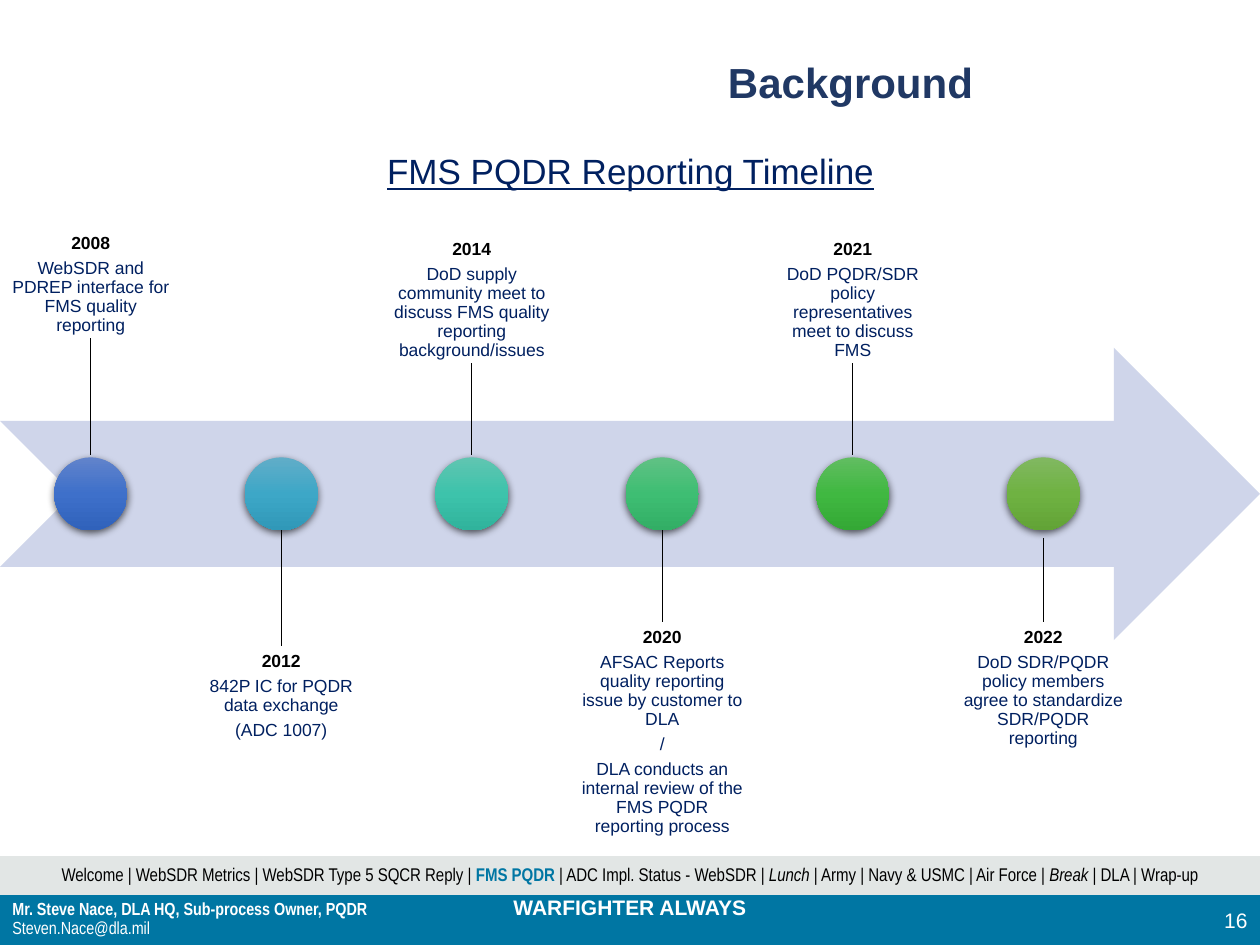
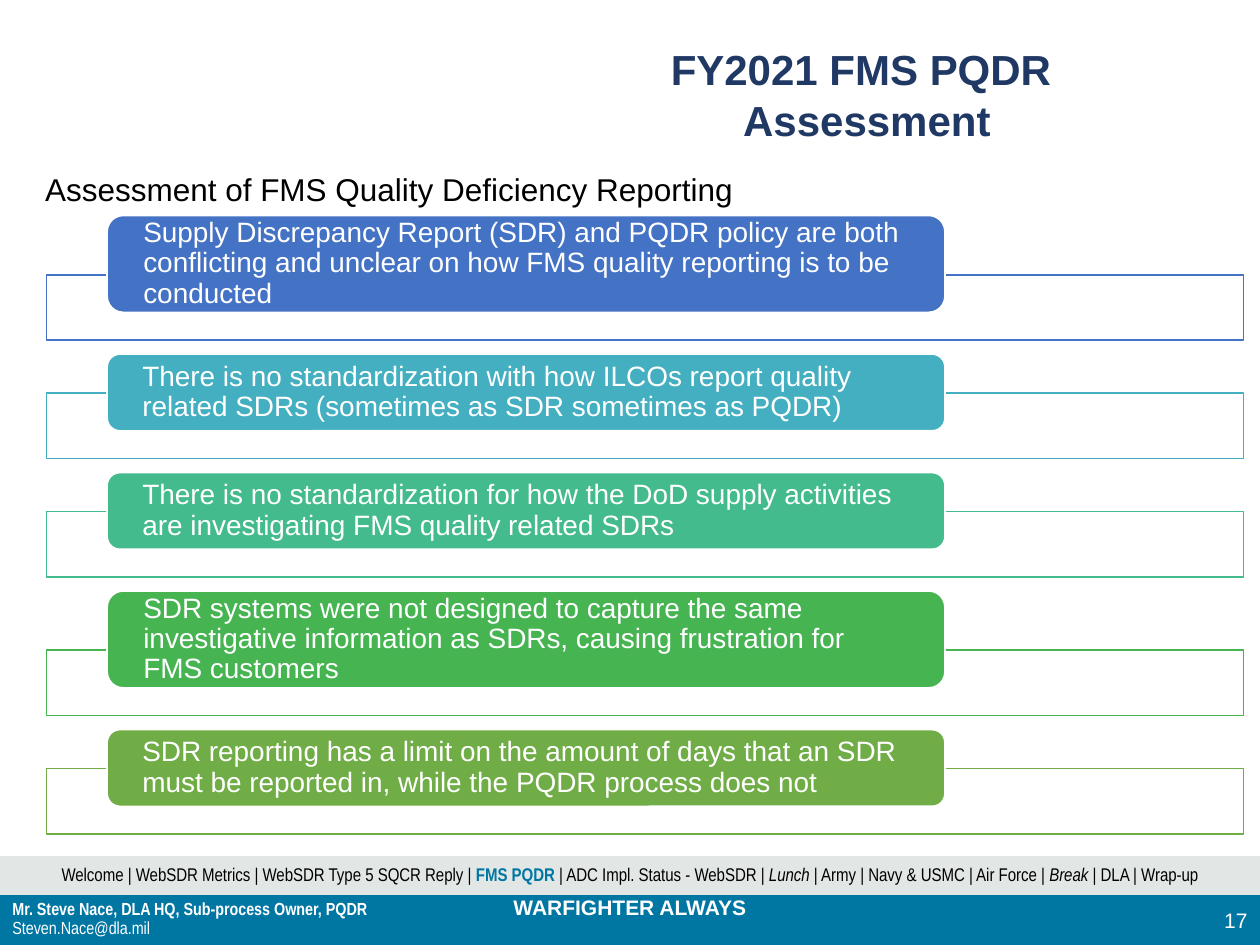
"""Build the FMS PQDR timeline and assessment slides."""
from lxml import etree
from pptx import Presentation
from pptx import util as u
from pptx.dml import color
from pptx.enum import shapes, text
from pptx.oxml import ns, parse_xml

HUES = {
    "blue": "0076A3", "grey": "E2E6E5", "title": "203864", "navy": "002060",
    "arrow": "CFD5EA", "white": "FFFFFF", "black": "000000",
}
KIND = shapes.MSO_SHAPE
MID, LOW = text.MSO_ANCHOR.MIDDLE, text.MSO_ANCHOR.BOTTOM
CENTER, RIGHT = text.PP_ALIGN.CENTER, text.PP_ALIGN.RIGHT
PAD = (0.1, 0.05, 0.1, 0.05)
BREAK = ("\n", {})
PITCH = 7.56 / 5

NAV = [
    ("Welcome | WebSDR Metrics | WebSDR Type 5 SQCR Reply | ", {}),
    ("FMS PQDR ", {"hue": "blue", "bold": True}),
    ("| ADC Impl. Status - WebSDR | ", {}),
    ("Lunch ", {"italic": True}),
    ("| Army | Navy & USMC | Air Force | ", {}),
    ("Break ", {"italic": True}),
    ("| DLA | Wrap-up", {}),
]
OWNER = [
    ("Mr. Steve Nace, DLA HQ, Sub-process Owner, PQDR", {"bold": True}),
    BREAK,
    ("Steven.Nace@dla.mil", {}),
]

# year, notes, leader end at the ball, leader end at the note, ball gradient
EVENTS = [
    ("2008", ["WebSDR and PDREP interface for FMS quality reporting"],
     3.61, 2.68, ("6183CB", "3E70CA", "3062BB")),
    ("2012", ["842P IC for PQDR data exchange", "(ADC 1007)"],
     4.21, 5.13, ("61ADC8", "3DA7C7", "3098B8")),
    ("2014", ["DoD supply community meet to discuss FMS quality reporting "
              "background/issues"],
     3.61, 2.88, ("60C5B1", "3DC3AB", "30B39C")),
    ("2020", ["AFSAC Reports quality reporting issue by customer to DLA", "/",
              "DLA conducts an internal review of the FMS PQDR reporting process"],
     4.21, 4.94, ("60C184", "3EBE73", "32AE65")),
    ("2021", ["DoD PQDR/SDR policy representatives meet to discuss FMS"],
     3.61, 2.88, ("61BD61", "40B841", "34A835")),
    ("2022", ["DoD SDR/PQDR policy members agree to standardize SDR/PQDR reporting"],
     4.27, 4.94, ("81B861", "6FB242", "62A336")),
]

FLAWS = [
    ("4472C4", 0.77, "Supply Discrepancy Report (SDR) and PQDR policy are both "
     "conflicting and unclear on how FMS quality reporting is to be conducted"),
    ("43AFC0", 0.61, "There is no standardization with how ILCOs report quality "
     "related SDRs (sometimes as SDR sometimes as PQDR)"),
    ("43BB8D", 0.61, "There is no standardization for how the DoD supply "
     "activities are investigating FMS quality related SDRs"),
    ("45B451", 0.77, "SDR systems were not designed to capture the same "
     "investigative information as SDRs, causing frustration for FMS customers"),
    ("70AD47", 0.61, "SDR reporting has a limit on the amount of days that an SDR "
     "must be reported in, while the PQDR process does not"),
]


def paint(name):
    """Return the colour for a palette name or a hex string."""
    return color.RGBColor.from_string(HUES.get(name, name))


def write(shape, paras, size, hue="black", face="Arial", align=None, anchor=None,
          pad=PAD, lead=None, after=None):
    """Fill a shape with paragraphs, each a list of (words, style) runs."""
    frame = shape.text_frame
    frame.word_wrap = True
    frame.vertical_anchor = anchor or text.MSO_ANCHOR.TOP
    sides = [u.Inches(p) for p in pad]
    frame.margin_left, frame.margin_top, frame.margin_right, frame.margin_bottom = sides
    for i, runs in enumerate(paras):
        para = frame.add_paragraph() if i else frame.paragraphs[0]
        para.alignment = align or text.PP_ALIGN.LEFT
        if lead:
            para.line_spacing = lead
        if after:
            para.space_after = u.Pt(after)
        for words, style in runs:
            if words == "\n":
                para.add_line_break()
                continue
            run = para.add_run()
            run.text = words
            font = run.font
            font.name, font.size = face, u.Pt(size)
            font.bold = style.get("bold", False)
            font.italic = style.get("italic", False)
            font.underline = style.get("under", False)
            font.color.rgb = paint(style.get("hue", hue))


def label(slide, box, paras, size, **look):
    """Add a text box and return it."""
    note = slide.shapes.add_textbox(*map(u.Inches, box))
    write(note, paras, size, **look)
    return note


def block(slide, kind, box, fill=None, edge=None):
    """Add a flat preset shape with an optional fill and one-point edge."""
    shape = slide.shapes.add_shape(kind, *map(u.Inches, box))
    if fill:
        shape.fill.solid()
        shape.fill.fore_color.rgb = paint(fill)
    if edge:
        shape.line.color.rgb = paint(edge)
        shape.line.width = u.Pt(1)
    else:
        shape.line.fill.background()
    shape.shadow.inherit = False
    return shape


def ball(slide, box, stops):
    """Add a shaded circle with a soft shadow below it."""
    props = block(slide, KIND.OVAL, box)._element.spPr
    marks = "".join(f'<a:gs pos="{i * 50000}"><a:srgbClr val="{hue}"/></a:gs>'
                    for i, hue in enumerate(stops))
    props.insert(2, parse_xml(
        f'<a:gradFill {ns.nsdecls("a")}><a:gsLst>{marks}</a:gsLst>'
        '<a:lin ang="5400000" scaled="0"/></a:gradFill>'))
    props.find(ns.qn("a:effectLst")).append(parse_xml(
        f'<a:outerShdw {ns.nsdecls("a")} blurRad="57150" dist="19050" dir="5400000" '
        'algn="ctr" rotWithShape="0"><a:srgbClr val="000000"><a:alpha val="63000"/>'
        '</a:srgbClr></a:outerShdw>'))


def leader(slide, mid, near, far, note, side):
    """Draw a thin line from a ball to the side of its note."""
    ends = [u.Inches(v) for v in (mid, near, mid, far)]
    line = slide.shapes.add_connector(shapes.MSO_CONNECTOR.STRAIGHT, *ends)
    line.end_connect(note, side)
    line.line.color.rgb = paint("black")
    line.line.width = u.Pt(0.5)
    etree.SubElement(line._element.spPr, ns.qn("a:effectLst"))


def event(slide, i, year, notes, near, far, stops):
    """Add one event: ball, note and leader."""
    left = i * PITCH
    above = far < near
    ball(slide, (left + 0.43, 3.63, 0.58, 0.58), stops)
    high = 1.2 if above else 1.75
    top = far - high if above else far
    paras = [[(year, {"bold": True, "hue": "black"})]] + [[(n, {})] for n in notes]
    note = label(slide, (left, top, 1.44, high), paras, 10, hue="navy", align=CENTER,
                 anchor=LOW if above else None, pad=(0.08, 0.05, 0.08, 0.02),
                 lead=0.9, after=3.5)
    leader(slide, left + 0.72, near, far, note, 2 if above else 0)


def flaw(slide, top, hue, high, words):
    """Add one finding: a wide outline with a rounded bar over it."""
    frame = block(slide, KIND.RECTANGLE, (0.37, top + high - 0.3, 9.5, 0.52), "white", hue)
    tint = frame._element.spPr.find(".//" + ns.qn("a:srgbClr"))
    etree.SubElement(tint, ns.qn("a:alpha"), val="90000")
    bar = block(slide, KIND.ROUNDED_RECTANGLE, (0.85, top, 6.65, high), hue, "white")
    write(bar, [[(words, {})]], 16, hue="white", anchor=MID, pad=(0.25, 0, 0.25, 0),
          lead=0.9)


def page(deck, number, spot, heading):
    """Add a slide with its title, agenda band and footer."""
    slide = deck.slides.add_slide(deck.slide_layouts[6])
    block(slide, KIND.RECTANGLE, (0, 7.1, 10, 0.4), "blue")
    label(slide, (0, 7.05, 10, 0.3), [[("WARFIGHTER ALWAYS", {"bold": True})]], 12,
          hue="white", align=CENTER)
    label(slide, (*spot, 5.5, 0.9), [heading], 24, hue="title", align=CENTER)
    label(slide, (9.5, 7.1, 0.5, 0.4), [[(str(number), {})]], 12, hue="white",
          align=RIGHT, anchor=MID)
    label(slide, (0, 7.1, 3.14, 0.4), [OWNER], 10, hue="white", face="Arial Narrow",
          lead=0.9)
    block(slide, KIND.RECTANGLE, (0, 6.8, 10, 0.3), "grey", "grey")
    label(slide, (0, 6.8, 10, 0.28), [NAV], 10.5, face="Arial Narrow", align=CENTER)
    return slide


def main():
    """Build and save the deck."""
    deck = Presentation()
    deck.slide_width, deck.slide_height = u.Inches(10), u.Inches(7.5)

    slide = page(deck, 16, (4, 0.4), [("Background", {"bold": True})])
    block(slide, KIND.NOTCHED_RIGHT_ARROW, (0, 2.76, 10, 2.32), "arrow")
    label(slide, (1.86, 1.14, 6.29, 0.44),
          [[("FMS PQDR Reporting Timeline", {"under": True})]], 20, hue="navy",
          align=CENTER)
    for i, item in enumerate(EVENTS):
        event(slide, i, *item)

    heading = [("FY2021 FMS PQDR ", {"bold": True}), BREAK, ("Assessment", {"bold": True})]
    slide = page(deck, 17, (4.13, 0.3), heading)
    label(slide, (0.26, 1.33, 9, 0.38),
          [[("Assessment of FMS Quality Deficiency Reporting", {})]], 18, lead=0.9)
    top = 1.71
    for hue, high, words in FLAWS:
        flaw(slide, top, hue, high, words)
        top += high + 0.33

    deck.save("out.pptx")


if __name__ == "__main__":
    main()
